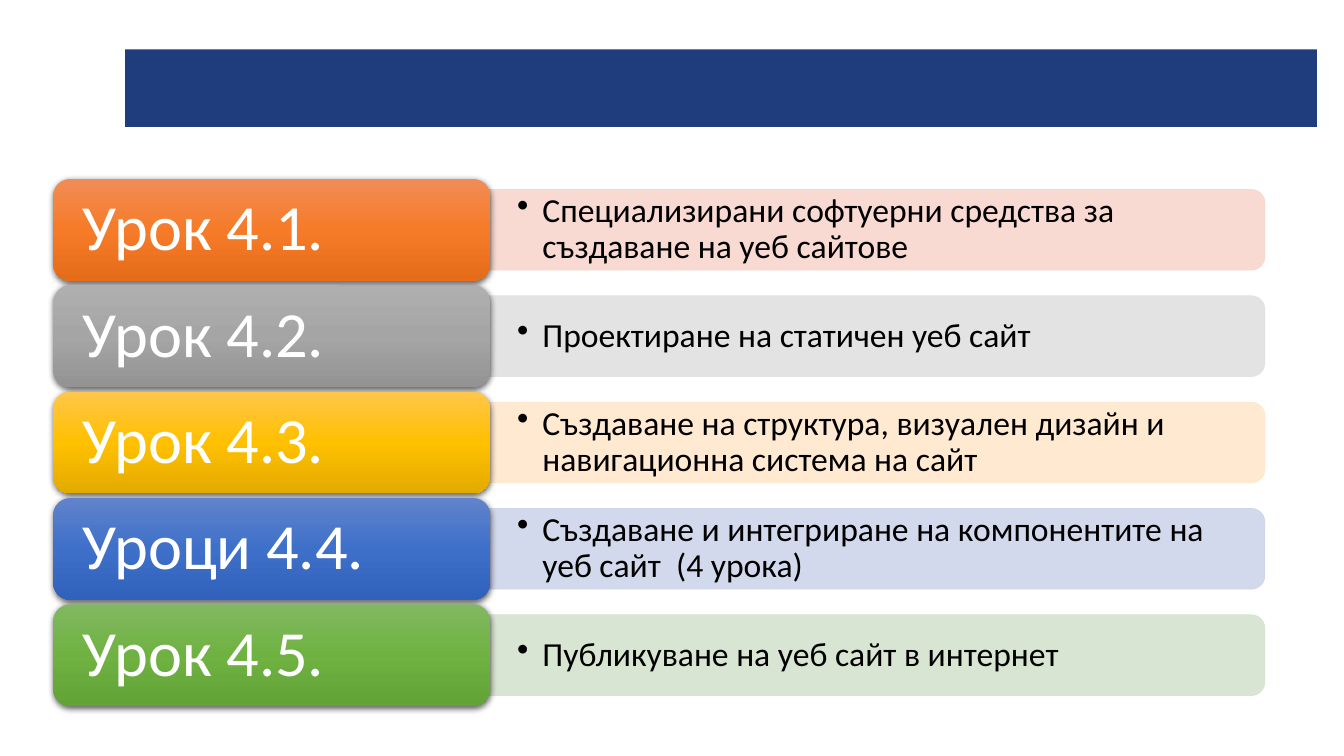
"""Builds the slide that lists the five lesson groups."""
import copy
from dataclasses import dataclass

import pptx
import pptx.dml.color
import pptx.enum.shapes
import pptx.enum.text
import pptx.oxml
import pptx.oxml.ns
import pptx.oxml.xmlchemy
import pptx.util

Inches = pptx.util.Inches
Pt = pptx.util.Pt
RGB = pptx.dml.color.RGBColor.from_string
Shapes = pptx.enum.shapes.MSO_SHAPE
qn = pptx.oxml.ns.qn
Element = pptx.oxml.xmlchemy.OxmlElement


@dataclass(frozen=True)
class Theme:
    """Holds the font, type sizes and colours."""
    font: str = "Calibri"
    label_size: int = 46
    topic_size: int = 24
    band: str = "1F3D7C"
    label_text: str = "FFFFFF"
    topic_text: str = "000000"
    shadow: str = "000000"
    panels: tuple = ("F8D7CE", "E1E1E1", "FFE8CC", "CFD5EA", "D5E3CF")
    gradients: tuple = (
        ("F18C57", "F67B28", "E56C19"),
        ("AFAFAF", "A5A5A5", "939393"),
        ("FFC64B", "FFC000", "E3AB00"),
        ("6183CB", "3E70CA", "3062BB"),
        ("81B861", "6FB242", "62A336"),
    )


class LessonSlide:
    """Draws the parts of the lesson list on one slide."""

    def __init__(self, slide, theme):
        self.slide = slide
        self.theme = theme

    def shape(self, kind, left, top, width, height):
        """Adds a shape without shadow or outline."""
        shape = self.slide.shapes.add_shape(
            kind, Inches(left), Inches(top), Inches(width), Inches(height))
        shape.shadow.inherit = False
        shape.line.fill.background()
        return shape

    def set_text(self, holder, text, size, color, margins):
        """Sets one left-aligned paragraph centred vertically."""
        frame = holder.text_frame
        frame.word_wrap = True
        frame.vertical_anchor = pptx.enum.text.MSO_ANCHOR.MIDDLE
        frame.margin_left = frame.margin_right = Inches(margins[0])
        frame.margin_top = frame.margin_bottom = Inches(margins[1])
        paragraph = frame.paragraphs[0]
        paragraph.text = text
        paragraph.alignment = pptx.enum.text.PP_ALIGN.LEFT
        paragraph.line_spacing = 0.9
        paragraph.font.name = self.theme.font
        paragraph.font.size = Pt(size)
        paragraph.font.color.rgb = RGB(color)
        return paragraph

    def band(self):
        """Draws the title band."""
        band = self.shape(Shapes.RECTANGLE, 1.24, 0.49, 11.82, 0.77)
        band.fill.solid()
        band.fill.fore_color.rgb = RGB(self.theme.band)

    def panel(self, middle, color):
        """Draws a pale panel rounded at its right end."""
        thickness, length = 0.8, 7.69
        panel = self.shape(Shapes.ROUND_2_SAME_RECTANGLE, 8.3,
                           middle - length / 2, thickness, length)
        panel.rotation = 90
        for fill in (panel.fill, panel.line.fill):
            fill.solid()
            fill.fore_color.rgb = RGB(color)
        panel.line.width = Pt(0.5)
        for shade in panel._element.spPr.findall(".//" + qn("a:srgbClr")):
            alpha = Element("a:alpha")
            alpha.set("val", "90000")
            shade.append(alpha)

    def topic(self, middle, text):
        """Adds the bulleted lesson topic."""
        height = 0.73
        box = self.slide.shapes.add_textbox(
            Inches(4.86), Inches(middle - height / 2), Inches(7.65), Inches(height))
        paragraph = self.set_text(box, text, self.theme.topic_size,
                                  self.theme.topic_text, (0.27, 0.14))
        properties = paragraph._p.get_or_add_pPr()
        properties.set("marL", str(Inches(0.25)))
        properties.set("indent", str(Inches(-0.25)))
        bullet = Element("a:buChar")
        bullet.set("char", "•")
        properties.find(qn("a:defRPr")).addprevious(bullet)

    def label(self, middle, text, gradient):
        """Draws a glossy lesson label with a soft shadow."""
        height = 1.01
        label = self.shape(Shapes.ROUNDED_RECTANGLE, 0.53,
                           middle - height / 2, 4.33, height)
        label.fill.gradient()
        label.fill.gradient_angle = 270
        first = label._element.spPr.find(".//" + qn("a:gs"))
        first.addnext(copy.deepcopy(first))
        for i, (stop, color) in enumerate(zip(label.fill.gradient_stops, gradient)):
            stop.position = i / 2
            stop.color.rgb = RGB(color)
        label._element.spPr.find(qn("a:effectLst")).append(pptx.oxml.parse_xml(
            '<a:outerShdw xmlns:a="http://schemas.openxmlformats.org/drawingml/2006/main"'
            f' blurRad="{Pt(4.5)}" dist="{Pt(1.5)}" dir="5400000" algn="ctr" rotWithShape="0">'
            f'<a:srgbClr val="{self.theme.shadow}"><a:alpha val="63000"/></a:srgbClr>'
            '</a:outerShdw>'))
        self.set_text(label, text, self.theme.label_size,
                      self.theme.label_text, (0.24, 0.1))


LESSONS = (
    ("Урок 4.1.", "Специализирани софтуерни средства за създаване на уеб сайтове"),
    ("Урок 4.2.", "Проектиране на статичен уеб сайт"),
    ("Урок 4.3.", "Създаване на структура, визуален дизайн и навигационна система на сайт"),
    ("Уроци 4.4.", "Създаване и интегриране на компонентите на уеб сайт  (4 урока)"),
    ("Урок 4.5.", "Публикуване на уеб сайт в интернет"),
)
FIRST_MIDDLE, LAST_MIDDLE = 2.28, 6.5
ROW_PITCH = (LAST_MIDDLE - FIRST_MIDDLE) / (len(LESSONS) - 1)


def main():
    """Builds and saves the presentation."""
    deck = pptx.Presentation()
    deck.slide_width, deck.slide_height = Inches(13.33), Inches(7.5)
    theme = Theme()
    page = LessonSlide(deck.slides.add_slide(deck.slide_layouts[6]), theme)
    page.band()
    rows = zip(LESSONS, theme.panels, theme.gradients)
    for i, ((lesson, topic), panel, gradient) in enumerate(rows):
        middle = FIRST_MIDDLE + i * ROW_PITCH
        page.panel(middle, panel)
        page.topic(middle, topic)
        page.label(middle, lesson, gradient)
    deck.save("out.pptx")


if __name__ == "__main__":
    main()
